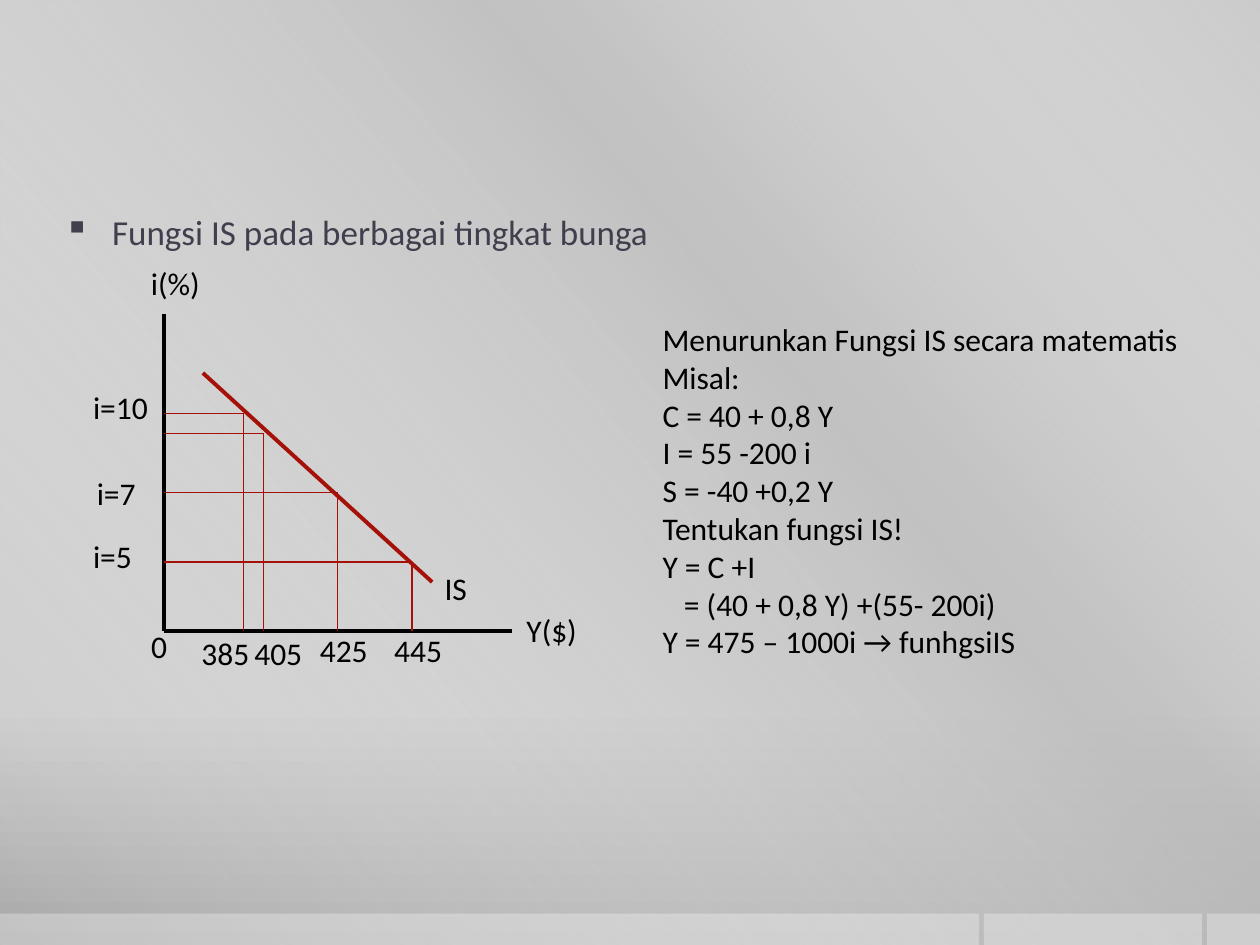
import pptx
import pptx.dml.color
import pptx.enum.shapes
import pptx.oxml
import pptx.oxml.ns
import pptx.oxml.xmlchemy
import pptx.util
from pptx.util import Inches, Pt

# Content
BLACK, RED, SLATE = "000000", "A51009", "3F3F4D"
HEADING = "Fungsi IS pada berbagai tingkat bunga"
DERIVATION = [  # text, indent
    ("Menurunkan Fungsi IS secara matematis", 0),
    ("Misal:", 0),
    ("C = 40 + 0,8 Y", 0),
    ("I = 55 -200 i", 0),
    ("S = -40 +0,2 Y", 0),
    ("Tentukan fungsi IS!", 0),
    ("Y = C +I", 0),
    ("= (40 + 0,8 Y) +(55- 200i)", 0.17),
    ("Y = 475 – 1000i → funhgsiIS", 0),
]
LABELS = [  # text, left, top, width
    ("i(%)", 1.1, 2.05, 0.6),
    ("i=10", 0.64, 3.03, 0.71),
    ("i=7", 0.67, 3.71, 0.54),
    ("i=5", 0.64, 4.21, 0.65),
    ("385", 1.5, 4.98, 0.59),
    ("405", 1.92, 4.98, 0.69),
    ("425", 2.44, 4.96, 0.59),
    ("445", 3.03, 4.96, 0.79),
    ("Y($)", 4.08, 4.8, 0.87),
    ("IS", 3.43, 4.47, 0.79),
    ("0", 1.1, 4.93, 0.45),
]

# Graph geometry
ORIGIN_X, ORIGIN_Y = 1.3, 5.01
AXIS_TOP, AXIS_RIGHT = 2.49, 4.06
IS_CURVE = (1.61, 2.96, 3.43, 4.62)
CURVE_POINTS = [(1.93, 3.28), (2.09, 3.44), (2.68, 3.91), (3.27, 4.46)]

# Backdrop: gradient stops are position %, colour, opacity %
BACKGROUND_STOPS = [(0, "CBCBCB", 100), (76, "C8C8C8", 100), (100, "A7A7A7", 100)]
SHEEN_STOPS = [(0, "FFFFFF", 0), (34, "BFBFBF", 61), (38, "BFBFBF", 76), (100, "FFFFFF", 0)]
FOOTER_STRIPS = [(0, 7.77), (7.81, 1.73), (9.58, 0.42)]  # left, width

presentation = pptx.Presentation()
presentation.slide_width, presentation.slide_height = Inches(10), Inches(7.5)
slide = presentation.slides.add_slide(presentation.slide_layouts[6])


def rgb(color):
    return pptx.dml.color.RGBColor.from_string(color)


def new_element(tag):
    return pptx.oxml.xmlchemy.OxmlElement(tag)


def set_gradient(fill, properties, stops, angle):
    fill.gradient()
    stop_xml = "".join(
        f'<a:gs pos="{position * 1000}"><a:srgbClr val="{color}">'
        f'<a:alpha val="{opacity * 1000}"/></a:srgbClr></a:gs>'
        for position, color, opacity in stops)
    gradient = pptx.oxml.parse_xml(
        f'<a:gradFill {pptx.oxml.ns.nsdecls("a")} rotWithShape="1">'
        f'<a:gsLst>{stop_xml}</a:gsLst>'
        f'<a:lin ang="{angle * 60000}" scaled="0"/></a:gradFill>')
    default = properties.find(pptx.oxml.ns.qn("a:gradFill"))
    properties.replace(default, gradient)


def add_rectangle(left, top, width, height):
    shape = slide.shapes.add_shape(
        pptx.enum.shapes.MSO_SHAPE.RECTANGLE,
        Inches(left), Inches(top), Inches(width), Inches(height))
    shape.shadow.inherit = False
    shape.line.fill.background()
    return shape


def add_line(x1, y1, x2, y2, color, width):
    line = slide.shapes.add_connector(
        pptx.enum.shapes.MSO_CONNECTOR.STRAIGHT,
        Inches(x1), Inches(y1), Inches(x2), Inches(y2))
    line.line.color.rgb = rgb(color)
    line.line.width = Pt(width)
    line._element.spPr.append(new_element("a:effectLst"))


def add_text(lines, left, top, width, height=0.4, size=18, color=BLACK):
    box = slide.shapes.add_textbox(
        Inches(left), Inches(top), Inches(width), Inches(height))
    frame = box.text_frame
    frame.word_wrap = True
    for index, (text, indent) in enumerate(lines):
        paragraph = frame.add_paragraph() if index else frame.paragraphs[0]
        if indent:
            paragraph._p.get_or_add_pPr().set("marL", str(int(Inches(indent))))
        run = paragraph.add_run()
        run.text = text
        run.font.name = "Calibri"
        run.font.size = Pt(size)
        run.font.color.rgb = rgb(color)
    return frame


# Background, diagonal sheen and footer strips
background_fill = slide.background.fill
set_gradient(background_fill, slide._element.cSld.bg.bgPr, BACKGROUND_STOPS, 90)
sheen = add_rectangle(0, 0, 10, 7.5)
set_gradient(sheen.fill, sheen._element.spPr, SHEEN_STOPS, 140)
for left, width in FOOTER_STRIPS:
    strip = add_rectangle(left, 7.25, width, 0.25)
    strip.fill.solid()
    strip.fill.fore_color.rgb = rgb("FFFFFF")
    strip_color = strip._element.spPr.find(".//" + pptx.oxml.ns.qn("a:srgbClr"))
    alpha = new_element("a:alpha")
    alpha.set("val", "30000")
    strip_color.append(alpha)

# Bulleted heading
heading = add_text([(HEADING, 0.38)], 0.51, 1.62, 9, 4.3, 20, SLATE)
heading.margin_left = heading.margin_right = 0
heading_properties = heading.paragraphs[0]._p.get_or_add_pPr()
heading_properties.set("indent", str(-int(Inches(0.38))))
bullet = new_element("a:buChar")
bullet.set("char", "▪")
heading_properties.append(bullet)

# Axes, IS curve and guide lines from each point to both axes
add_line(ORIGIN_X, AXIS_TOP, ORIGIN_X, ORIGIN_Y, BLACK, 2.25)
add_line(ORIGIN_X, ORIGIN_Y, AXIS_RIGHT, ORIGIN_Y, BLACK, 2.25)
add_line(*IS_CURVE, RED, 2.25)
for x, y in CURVE_POINTS:
    add_line(ORIGIN_X, y, x, y, RED, 0.75)
    add_line(x, y, x, ORIGIN_Y, RED, 0.75)

# Graph labels and derivation
for text, left, top, width in LABELS:
    add_text([(text, 0)], left, top, width)
add_text(DERIVATION, 5.16, 2.49, 4.49, 4.64)

presentation.save("out.pptx")
